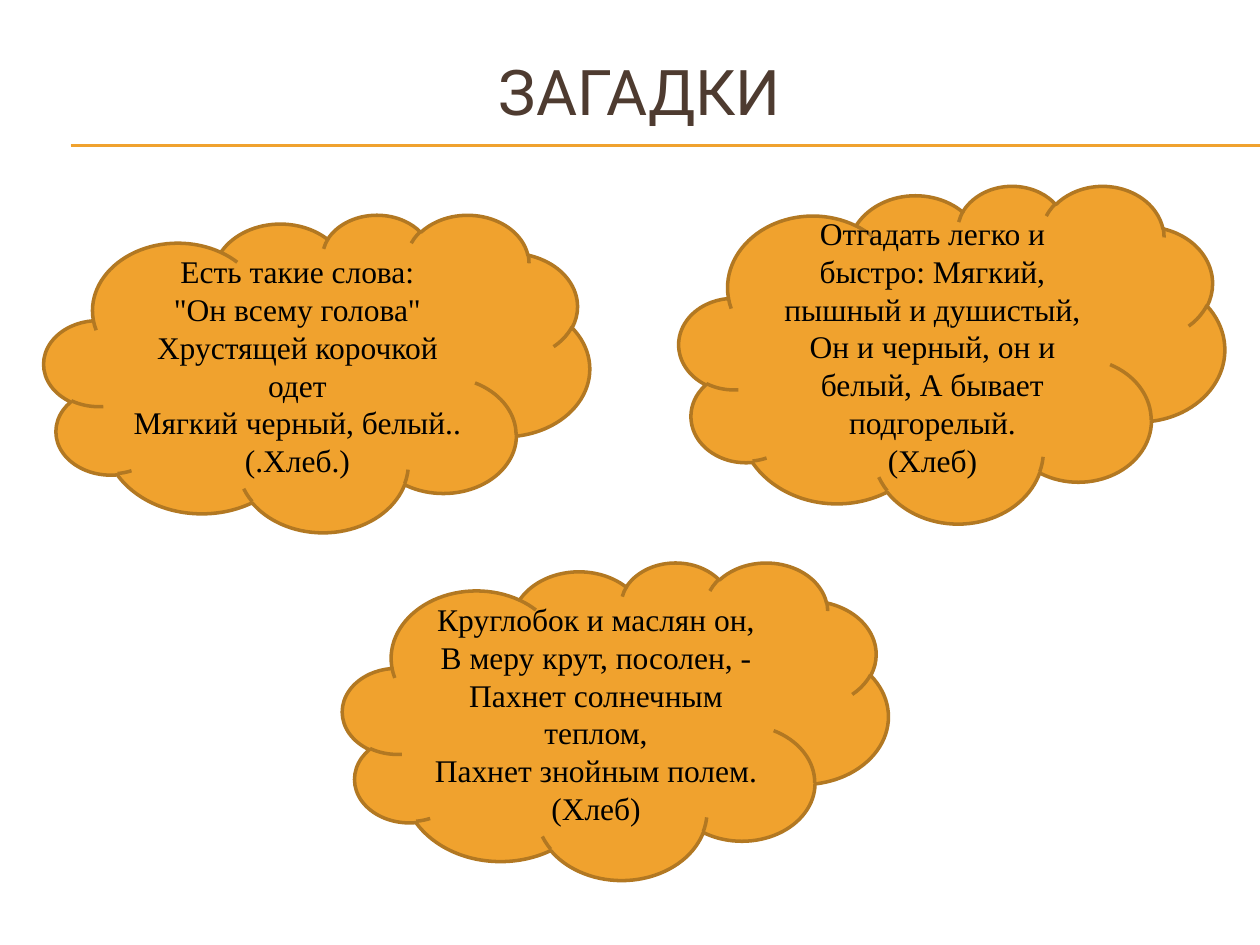
"""Build a slide of three bread riddles in clouds under a ruled title."""
from lxml import etree
from pptx import Presentation
from pptx.dml.color import RGBColor
from pptx.enum import shapes, text
from pptx.oxml.ns import qn
from pptx.util import Inches, Pt

COLORS = {"amber": "F0A22E", "outline": "B27822", "title": "4E3B30", "riddle": "000000"}
TITLE = ("ЗАГАДКИ", (0.33, 0.21, 9.5, 1.02))
TITLE_FONT = {"name": "Roboto", "size": Pt(36)}
RIDDLE_FONT = {"name": "Times New Roman", "size": Pt(18)}
RULES = [1.15, 1.16]
CLOUD_WIDTH = 4.33
CLOUDS = [
    (0.35, 1.7, 2.52, [
        'Есть такие слова:\n"Он всему голова"\nХрустящей корочкой одет\n'
        "Мягкий черный, белый..(.Хлеб.)"]),
    (5.39, 1.47, 2.68, [
        "Отгадать легко и быстро: Мягкий, пышный и душистый,\n"
        "Он и черный, он и белый, А бывает подгорелый.",
        "(Хлеб)"]),
    (2.72, 4.46, 2.52, [
        "Круглобок и маслян он,\nВ меру крут, посолен, -\nПахнет солнечным теплом,\n"
        "Пахнет знойным полем.\n(Хлеб)"]),
]


def color(name):
    return RGBColor.from_string(COLORS[name])


def write(sp, paragraphs, font, color_name):
    tf = sp.text_frame
    tf.word_wrap = True
    tf.vertical_anchor = text.MSO_ANCHOR.MIDDLE
    for i, content in enumerate(paragraphs):
        p = tf.add_paragraph() if i else tf.paragraphs[0]
        p.text = content
        p.alignment = text.PP_ALIGN.CENTER
        for r in p.runs:
            for key, value in font.items():
                setattr(r.font, key, value)
            r.font.color.rgb = color(color_name)


def add_rule(s, y):
    line = s.shapes.add_connector(
        shapes.MSO_CONNECTOR.STRAIGHT, Inches(0.56), Inches(y), Inches(10), Inches(y))
    line.line.color.rgb = color("amber")
    line.line.width = Pt(0.75)
    etree.SubElement(line._element.spPr, qn("a:effectLst"))


def add_cloud(s, left, top, height, riddle):
    sp = s.shapes.add_shape(
        shapes.MSO_SHAPE.CLOUD, *map(Inches, (left, top, CLOUD_WIDTH, height)))
    sp.shadow.inherit = False
    sp.fill.solid()
    sp.fill.fore_color.rgb = color("amber")
    sp.line.color.rgb = color("outline")
    sp.line.width = Pt(2)
    write(sp, riddle, RIDDLE_FONT, "riddle")


def main():
    prs = Presentation()
    prs.slide_width, prs.slide_height = Inches(10), Inches(7.5)
    s = prs.slides.add_slide(prs.slide_layouts[6])
    for y in RULES:
        add_rule(s, y)
    heading, box = TITLE
    write(s.shapes.add_textbox(*map(Inches, box)), [heading], TITLE_FONT, "title")
    for cloud in CLOUDS:
        add_cloud(s, *cloud)
    prs.save("out.pptx")


if __name__ == "__main__":
    main()
